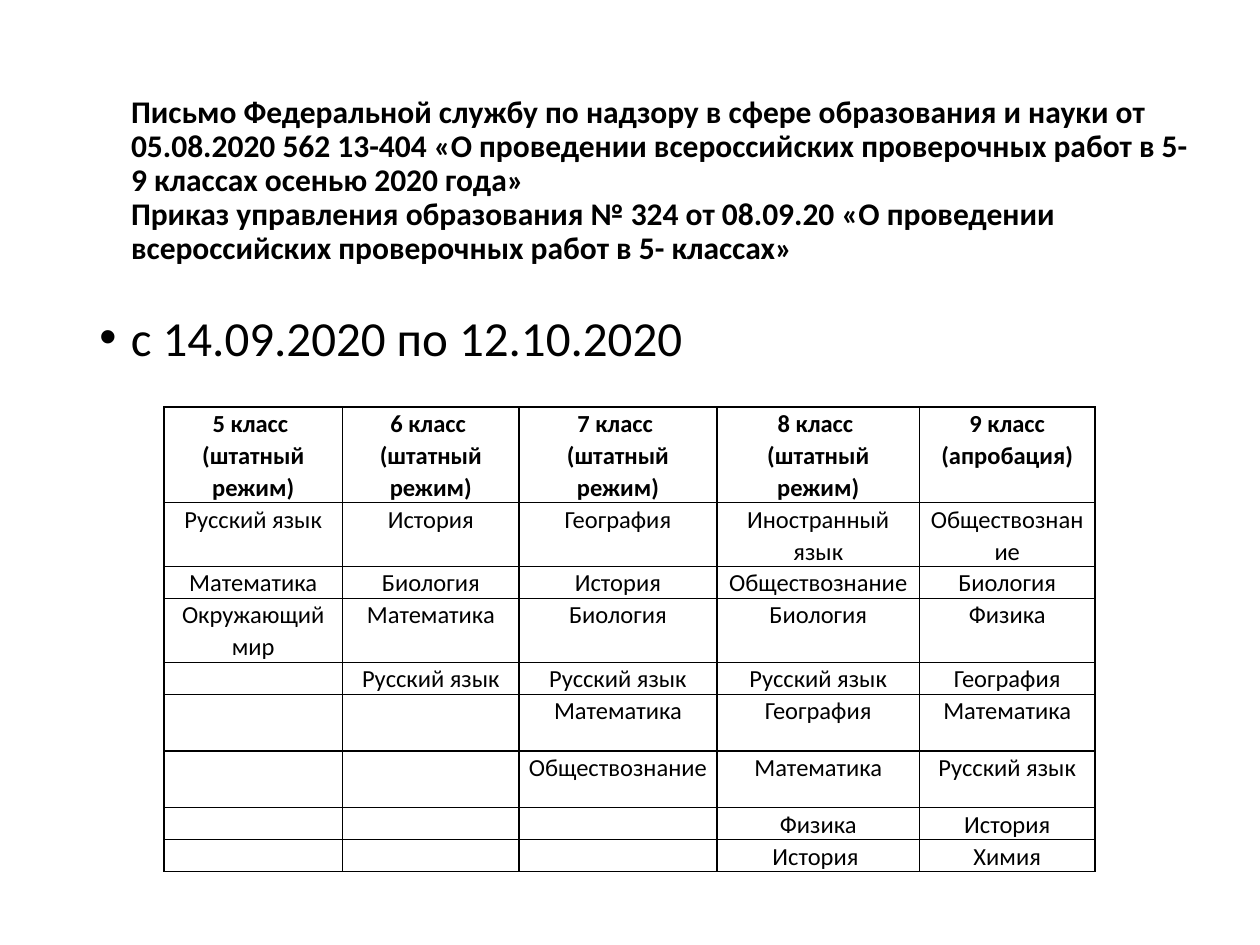
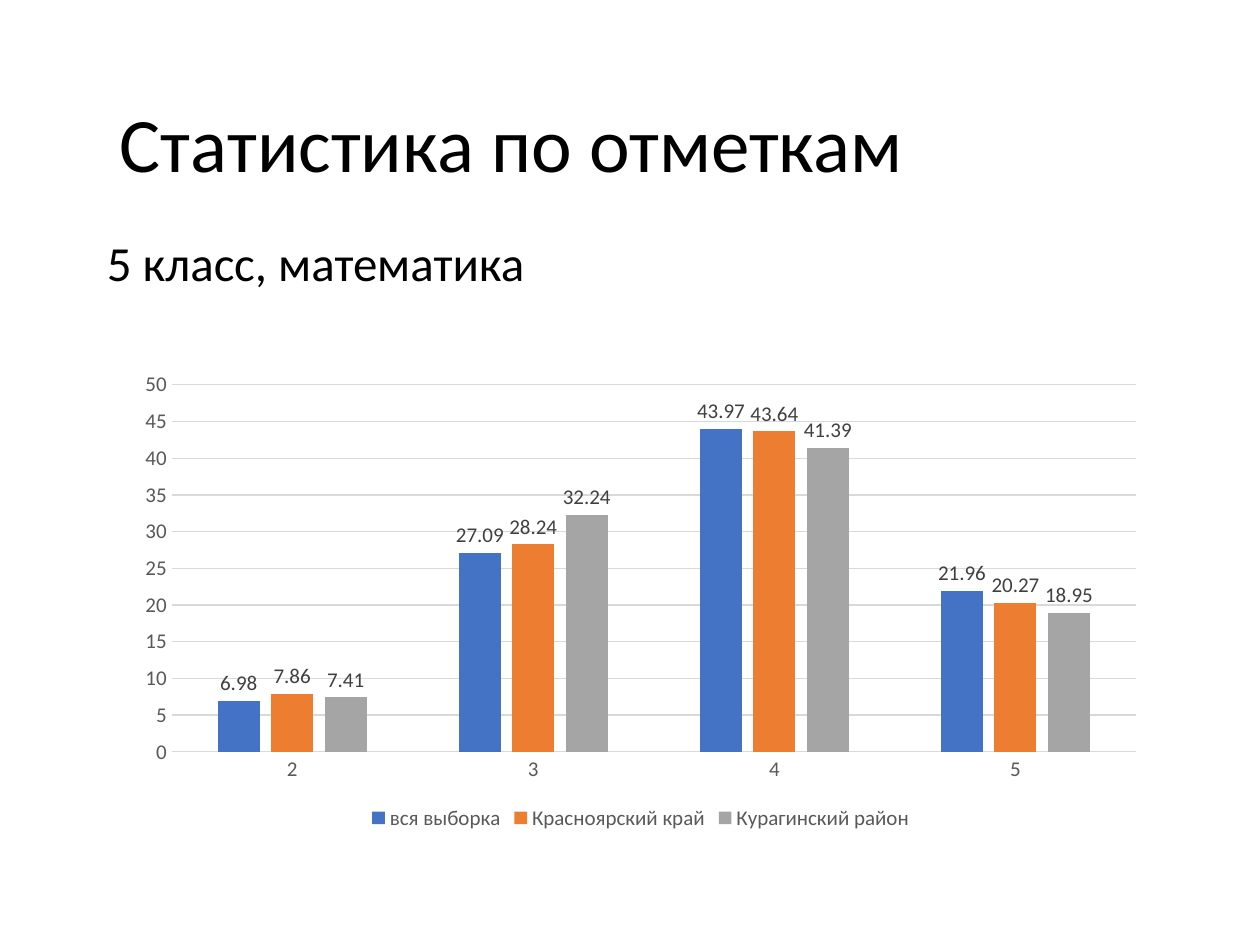
"""Build two slides on school-wide test subjects and mark statistics."""
import copy
from dataclasses import dataclass
from typing import Any

import pptx
import pptx.chart.data
import pptx.dml.color
import pptx.enum.chart
import pptx.enum.text
import pptx.oxml
import pptx.oxml.ns
import pptx.util

Inches = pptx.util.Inches
Pt = pptx.util.Pt
qn = pptx.oxml.ns.qn
Align = pptx.enum.text.PP_ALIGN
Anchor = pptx.enum.text.MSO_ANCHOR

FONT = "Calibri"
COLORS = {
    "text": "000000",
    "axis": "595959",
    "label": "404040",
    "grid": "D9D9D9",
    "all": "4472C4",
    "region": "ED7D31",
    "district": "A5A5A5",
}
A_NS = pptx.oxml.ns.nsdecls("a")


@dataclass
class TextBlock:
    text: str
    left: float
    top: float
    width: float
    height: float
    size: float
    bold: bool = False
    spacing: float = 0.9
    bullet: bool = False


@dataclass
class MarkSeries:
    name: str
    color: str
    values: tuple[float, ...]


TITLES = (
    TextBlock(
        "Письмо Федеральной службу по надзору в сфере образования и науки от "
        "05.08.2020 562 13-404 «О проведении всероссийских проверочных работ в 5-9 "
        "классах осенью 2020 года»\vПриказ управления образования № 324 от 08.09.20 "
        "«О проведении всероссийских проверочных работ в 5- классах»",
        0.94, 0.4, 8.62, 2.08, 18, bold=True),
    TextBlock("Статистика по отметкам", 0.85, 0.49, 8.47, 1.36, 44),
)
DATES = TextBlock("с 14.09.2020 по 12.10.2020", 0.69, 2.48, 8.62, 0.49, 28,
                  spacing=0.8, bullet=True)
SUBJECT = TextBlock("5 класс, математика", 0.75, 1.85, 8.67, 1.03, 28)

COL_WIDTHS = (1.42, 1.4, 1.57, 1.61, 1.39)
ROW_HEIGHTS = (0.67, 0.45, 0.22, 0.45, 0.22, 0.45, 0.45, 0.22, 0.22)
REGULAR = "\n(штатный режим)"
GRADES = (
    ("5 класс " + REGULAR, "Русский язык", "Математика", "Окружающий мир"),
    ("6 класс " + REGULAR, "История", "Биология", "Математика", "Русский язык"),
    ("7 класс " + REGULAR, "География", "История", "Биология", "Русский язык",
     "Математика", "Обществознание"),
    ("8 класс " + REGULAR, "Иностранный язык", "Обществознание", "Биология",
     "Русский язык", "География", "Математика", "Физика", "История "),
    ("9 класс (апробация)", "Обществознание", "Биология", "Физика", "География",
     "Математика", "Русский язык", "История", "Химия"),
)

MARKS = ("2", "3", "4", "5")
SERIES = (
    MarkSeries("вся выборка", "all", (6.98, 27.09, 43.97, 21.96)),
    MarkSeries("Красноярский край", "region", (7.86, 28.24, 43.64, 20.27)),
    MarkSeries("Курагинский район", "district", (7.41, 32.24, 41.39, 18.95)),
)


def set_attrs(obj: Any, values: dict[str, Any]) -> None:
    """Set every attribute named in values."""
    for name, value in values.items():
        setattr(obj, name, value)


def rgb(name: str) -> pptx.dml.color.RGBColor:
    """Look up a palette colour."""
    return pptx.dml.color.RGBColor.from_string(COLORS[name])


def set_font(font: Any, size: float, color: str = "text", bold: bool = False) -> None:
    """Give a font its face, size, weight and colour."""
    set_attrs(font, {"name": FONT, "size": Pt(size), "bold": bold})
    font.color.rgb = rgb(color)


def add_bullet(p: Any) -> None:
    """Give a paragraph a hanging round bullet."""
    ppr = p._p.get_or_add_pPr()
    ppr.set("marL", str(Inches(0.25)))
    ppr.set("indent", str(Inches(-0.25)))
    for xml in (f'<a:buFont {A_NS} typeface="Arial"/>', f'<a:buChar {A_NS} char="•"/>'):
        ppr.append(pptx.oxml.parse_xml(xml))


def fill_text(sp: Any, block: TextBlock, anchor: Any) -> None:
    """Place a shape and write its text block."""
    set_attrs(sp, {side: Inches(getattr(block, side))
                   for side in ("left", "top", "width", "height")})
    tf = sp.text_frame
    tf.text = block.text
    set_attrs(tf, {"word_wrap": True, "vertical_anchor": anchor,
                   "auto_size": pptx.enum.text.MSO_AUTO_SIZE.NONE})
    p = tf.paragraphs[0]
    if block.bullet:
        add_bullet(p)
    set_attrs(p, {"alignment": Align.LEFT, "line_spacing": block.spacing})
    for r in p.runs:
        set_font(r.font, block.size, bold=block.bold)
    for br in p._p.findall(qn("a:br")):
        br.append(copy.deepcopy(p.runs[0]._r.rPr))


def add_slide(prs: Any, title: TextBlock, body: TextBlock) -> Any:
    """Add a title-only slide with a line of body text."""
    s = prs.slides.add_slide(prs.slide_layouts[5])
    fill_text(s.shapes.title, title, Anchor.MIDDLE)
    fill_text(s.shapes.add_textbox(0, 0, 0, 0), body, Anchor.TOP)
    return s


def format_cell(cell: Any, text: str, bold: bool) -> None:
    """Write one centred cell with thin borders and no fill."""
    cell.text = text
    set_attrs(cell, {"margin_left": Inches(0.07), "margin_right": Inches(0.07),
                     "margin_top": 0, "margin_bottom": 0})
    for p in cell.text_frame.paragraphs:
        set_attrs(p, {"alignment": Align.CENTER, "line_spacing": 1.07})
        for r in p.runs:
            set_font(r.font, 14, bold=bold)
        if not text:
            p._p.get_or_add_endParaRPr().set("sz", "1400")
    tcpr = cell._tc.get_or_add_tcPr()
    for side in "LRTB":
        tcpr.append(pptx.oxml.parse_xml(
            f'<a:ln{side} {A_NS} w="{Pt(1)}"><a:solidFill>'
            f'<a:srgbClr val="{COLORS["text"]}"/></a:solidFill></a:ln{side}>'))
    cell.fill.background()


def add_subject_table(s: Any) -> None:
    """Add the table of subjects by grade."""
    table = s.shapes.add_table(
        len(ROW_HEIGHTS), len(COL_WIDTHS), Inches(1.3), Inches(3.23),
        Inches(sum(COL_WIDTHS)), Inches(sum(ROW_HEIGHTS))).table
    set_attrs(table, {"first_row": False, "horz_banding": False})
    for row, height in zip(table.rows, ROW_HEIGHTS):
        row.height = Inches(height)
    for c, (width, subjects) in enumerate(zip(COL_WIDTHS, GRADES)):
        table.columns[c].width = Inches(width)
        for r in range(len(ROW_HEIGHTS)):
            text = subjects[r] if r < len(subjects) else ""
            format_cell(table.cell(r, c), text, bold=r == 0)


def add_marks_chart(s: Any) -> None:
    """Add the column chart of mark shares."""
    enum = pptx.enum.chart
    data = pptx.chart.data.CategoryChartData()
    data.categories = MARKS
    for item in SERIES:
        data.add_series(item.name, item.values)
    chart = s.shapes.add_chart(
        enum.XL_CHART_TYPE.COLUMN_CLUSTERED, Inches(0.99), Inches(2.88),
        Inches(8.19), Inches(3.75), data).chart
    set_attrs(chart, {"has_title": False, "has_legend": True})
    set_font(chart.font, 10)
    set_attrs(chart.legend, {"position": enum.XL_LEGEND_POSITION.BOTTOM,
                             "include_in_layout": False})
    set_font(chart.legend.font, 12, "axis")

    cat, val = chart.category_axis, chart.value_axis
    for axis in (cat, val):
        set_attrs(axis, {"major_tick_mark": enum.XL_TICK_MARK.NONE,
                         "minor_tick_mark": enum.XL_TICK_MARK.NONE})
        set_font(axis.tick_labels.font, 12, "axis")
    set_attrs(val, {"minimum_scale": 0, "maximum_scale": 50, "major_unit": 5,
                    "has_major_gridlines": True})
    val.format.line.fill.background()
    for line in (cat.format.line, val.major_gridlines.format.line):
        line.color.rgb = rgb("grid")
        line.width = Pt(0.75)

    plot = chart.plots[0]
    set_attrs(plot, {"gap_width": 219, "overlap": -27, "vary_by_categories": False})
    for series, item in zip(plot.series, SERIES):
        series.format.fill.solid()
        series.format.fill.fore_color.rgb = rgb(item.color)
        labels = series.data_labels
        set_attrs(labels, {"show_value": True,
                           "position": enum.XL_LABEL_POSITION.OUTSIDE_END})
        set_font(labels.font, 12, "label")


def main() -> None:
    """Build and save the presentation."""
    prs = pptx.Presentation()
    set_attrs(prs, {"slide_width": Inches(10), "slide_height": Inches(7.5)})
    add_subject_table(add_slide(prs, TITLES[0], DATES))
    add_marks_chart(add_slide(prs, TITLES[1], SUBJECT))
    prs.save("out.pptx")


if __name__ == "__main__":
    main()
